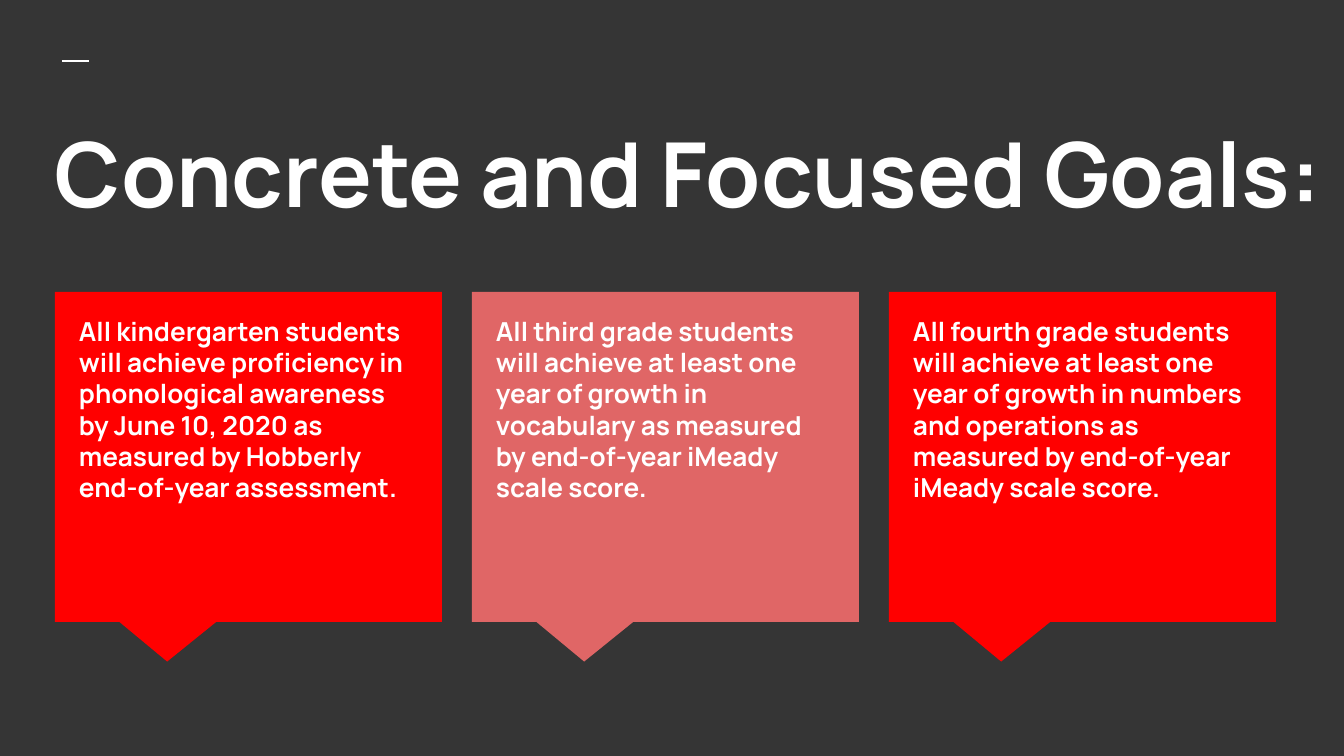
from dataclasses import dataclass

from lxml import etree
from pptx import Presentation
from pptx.dml.color import RGBColor
from pptx.enum.shapes import MSO_CONNECTOR, MSO_SHAPE
from pptx.enum.text import MSO_ANCHOR, PP_ALIGN
from pptx.oxml.ns import qn
from pptx.util import Pt

STRAIGHT = MSO_CONNECTOR.STRAIGHT
CALLOUT = MSO_SHAPE.RECTANGULAR_CALLOUT
TOP = MSO_ANCHOR.TOP
LEFT = PP_ALIGN.LEFT

EMU_PER_PX = 914400 / 134.4
SLIDE_W, SLIDE_H = 1344, 756
BLANK_LAYOUT = 6


@dataclass(frozen=True)
class Theme:
    font: str = "Manrope"
    background: RGBColor = RGBColor(0x35, 0x35, 0x35)
    ink: RGBColor = RGBColor(0xFF, 0xFF, 0xFF)
    red: RGBColor = RGBColor(0xFF, 0x00, 0x00)
    rose: RGBColor = RGBColor(0xE0, 0x66, 0x66)
    title_size: int = 48
    goal_size: int = 14
    dash_weight: float = 1.5


THEME = Theme()

# Goal cards: equal pitch across the slide
CARD_LEFT, CARD_TOP = 55, 292
CARD_W, CARD_H = 387, 330
CARD_PITCH = 417
POINTER_TIP = (-0.21, 0.62)
TEXT_INSET_X, TEXT_INSET_Y = 11, 10
GOAL_TEXT_H = 294
TEXT_MARGIN = 13

GOALS = [
    ("All kindergarten students will achieve proficiency in phonological "
     "awareness by June 10, 2020 as measured by Hobberly end-of-year "
     "assessment.", THEME.red),
    ("All third grade students will achieve at least one year of growth in "
     "vocabulary as measured by end-of-year iMeady scale score.", THEME.rose),
    ("All fourth grade students will achieve at least one year of growth in "
     "numbers and operations as measured by end-of-year iMeady scale score.",
     THEME.red),
]


def px(length):
    return round(length * EMU_PER_PX)


def add_text(slide, text, *, left, top, width, height, size, space_after=0):
    box = slide.shapes.add_textbox(px(left), px(top), px(width), px(height))
    frame = box.text_frame
    frame.word_wrap = True
    frame.vertical_anchor = TOP
    frame.margin_left = frame.margin_right = px(TEXT_MARGIN)
    frame.margin_top = frame.margin_bottom = px(TEXT_MARGIN)
    paragraph = frame.paragraphs[0]
    paragraph.alignment = LEFT
    paragraph.space_after = Pt(space_after)
    run = paragraph.add_run()
    run.text = text
    run.font.name = THEME.font
    run.font.size = Pt(size)
    run.font.bold = True
    run.font.color.rgb = THEME.ink


def add_dash(slide, left, right, y):
    dash = slide.shapes.add_connector(STRAIGHT, px(left), px(y), px(right), px(y))
    dash.line.color.rgb = THEME.ink
    dash.line.width = Pt(THEME.dash_weight)
    etree.SubElement(dash._element.spPr, qn("a:effectLst"))


def add_card(slide, left, color):
    card = slide.shapes.add_shape(
        CALLOUT, px(left), px(CARD_TOP), px(CARD_W), px(CARD_H))
    card.shadow.inherit = False
    card.fill.solid()
    card.fill.fore_color.rgb = color
    card.line.fill.background()
    for index, offset in enumerate(POINTER_TIP):
        card.adjustments[index] = offset


def main():
    prs = Presentation()
    prs.slide_width, prs.slide_height = px(SLIDE_W), px(SLIDE_H)
    slide = prs.slides.add_slide(prs.slide_layouts[BLANK_LAYOUT])
    slide.background.fill.solid()
    slide.background.fill.fore_color.rgb = THEME.background

    # Heading
    add_dash(slide, left=62, right=89, y=61)
    add_text(slide, "Concrete and Focused Goals:", left=42, top=105,
             width=1293, height=150, size=THEME.title_size)

    # Goal cards with their text
    for column, (goal, color) in enumerate(GOALS):
        left = CARD_LEFT + column * CARD_PITCH
        add_card(slide, left, color)
        add_text(slide, goal, left=left + TEXT_INSET_X,
                 top=CARD_TOP + TEXT_INSET_Y,
                 width=CARD_W - 2 * TEXT_INSET_X, height=GOAL_TEXT_H,
                 size=THEME.goal_size, space_after=12)

    prs.save("out.pptx")


if __name__ == "__main__":
    main()
